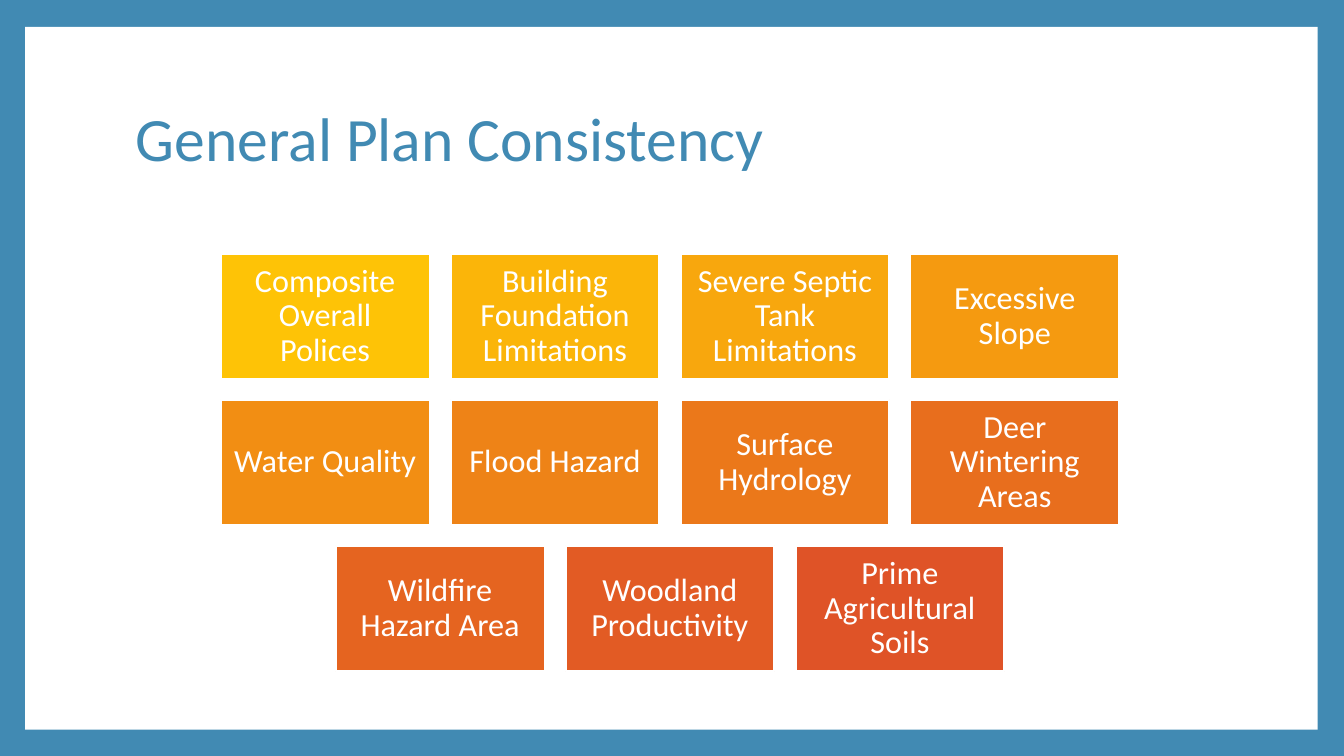
from pptx import Presentation
from pptx.dml.color import RGBColor
from pptx.enum.shapes import MSO_SHAPE
from pptx.enum.text import MSO_ANCHOR, PP_ALIGN
from pptx.util import Pt

COLORS = {"frame": "418AB3", "white": "FFFFFF"}
ROWS = [
    [("Composite Overall Polices", "FEC306"), ("Building Foundation Limitations", "FBB509"),
     ("Severe Septic Tank Limitations", "F8A70D"), ("Excessive Slope", "F59A10")],
    [("Water Quality", "F28E13"), ("Flood Hazard", "EE8317"),
     ("Surface Hydrology", "EB781A"), ("Deer Wintering Areas", "E86E1D")],
    [("Wildfire Hazard Area", "E56420"), ("Woodland Productivity", "E25B24"),
     ("Prime Agricultural Soils", "DF5327")],
]
CARD_WIDTH, CARD_HEIGHT = 149.2, 89.5
COLUMN_STEP, ROW_STEP = 164.2, 104.4
GRID_CENTER, GRID_TOP = 478.6, 181.2


def add_block(left, top, width, height, fill):
    block = slide.shapes.add_shape(
        MSO_SHAPE.RECTANGLE, Pt(left), Pt(top), Pt(width), Pt(height))
    block.shadow.inherit = False
    block.fill.solid()
    block.fill.fore_color.rgb = RGBColor.from_string(fill)
    block.line.color.rgb = RGBColor.from_string(COLORS["white"])
    block.line.width = Pt(1.5)
    return block


def write(frame, text, size, color, align):
    frame.text = text
    frame.word_wrap = True
    frame.vertical_anchor = MSO_ANCHOR.MIDDLE
    paragraph = frame.paragraphs[0]
    paragraph.alignment = align
    paragraph.line_spacing = 0.9
    font = paragraph.runs[0].font
    font.name = "Calibri"
    font.size = Pt(size)
    font.color.rgb = RGBColor.from_string(color)


deck = Presentation()
deck.slide_width, deck.slide_height = Pt(960), Pt(540)
slide = deck.slides.add_slide(deck.slide_layouts[6])
slide.background.fill.solid()
slide.background.fill.fore_color.rgb = RGBColor.from_string(COLORS["frame"])

panel = add_block(18, 19.2, 923.2, 502, COLORS["white"])
panel.line.fill.background()

title = slide.shapes.add_textbox(Pt(90), Pt(48), Pt(777.6), Pt(106.6))
write(title.text_frame, "General Plan Consistency", 44, COLORS["frame"], PP_ALIGN.LEFT)

for row, topics in enumerate(ROWS):
    row_width = (len(topics) - 1) * COLUMN_STEP + CARD_WIDTH
    row_left = GRID_CENTER - row_width / 2
    for column, (topic, fill) in enumerate(topics):
        card = add_block(row_left + column * COLUMN_STEP, GRID_TOP + row * ROW_STEP,
                         CARD_WIDTH, CARD_HEIGHT, fill)
        frame = card.text_frame
        frame.margin_left = frame.margin_right = Pt(6.9)
        frame.margin_top = frame.margin_bottom = Pt(6.9)
        write(frame, topic, 23, COLORS["white"], PP_ALIGN.CENTER)

deck.save("out.pptx")
